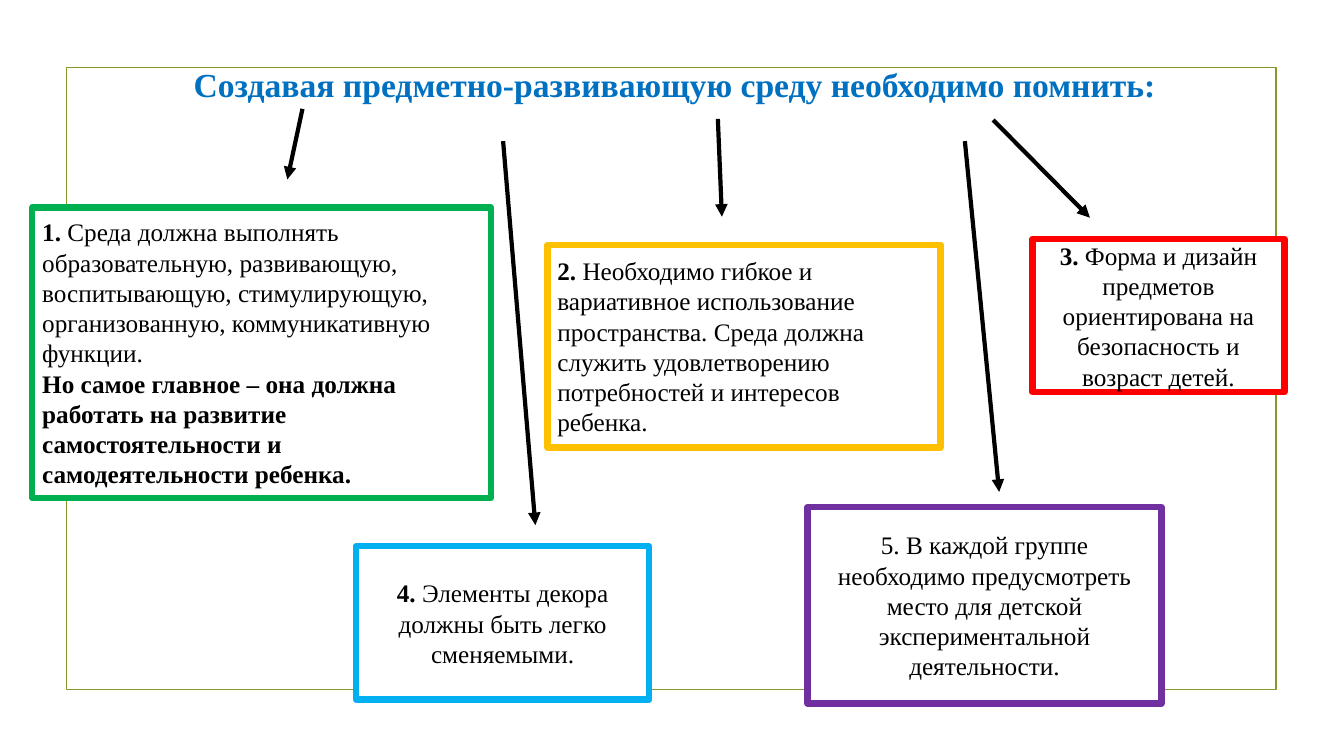
import pptx
import pptx.util
from pptx.dml.color import RGBColor
from pptx.enum.shapes import MSO_CONNECTOR, MSO_SHAPE
from pptx.enum.text import MSO_ANCHOR, MSO_AUTO_SIZE, PP_ALIGN
from pptx.oxml.ns import qn
from lxml import etree

PX = 9144
FONT = "Times New Roman"
COLORS = {
    "heading": "0070C0", "text": "000000", "paper": "FFFFFF", "frame": "83992A",
    "green": "00B050", "sky": "00B0F0", "red": "FF0000",
    "amber": "FFC000", "violet": "7030A0",
}
HEADING = "Создавая предметно-развивающую среду необходимо помнить:"
HEADING_AREA = (182, 58, 985, 50)
FRAME_AREA = (66, 67, 1200, 617)
LEFT, CENTER = PP_ALIGN.LEFT, PP_ALIGN.CENTER

PRINCIPLES = [
    ("green", (32, 206, 455, 288), LEFT, [
        [("1. ", True), ("Среда должна выполнять", False)],
        [("образовательную, развивающую, воспитывающую, стимулирующую, "
          "организованную, коммуникативную функции.", False)],
        [("Но самое главное – она должна работать на развитие "
          "самостоятельности и самодеятельности ребенка.", True)],
    ]),
    ("sky", (353, 542, 291, 152), CENTER, [
        [("4. ", True), ("Элементы декора должны быть легко сменяемыми.", False)],
    ]),
    ("red", (1024, 237, 250, 152), CENTER, [
        [("3. ", True), ("Форма и дизайн предметов ориентирована на "
                         "безопасность и возраст детей.", False)],
    ]),
    ("amber", (543, 243, 390, 201), LEFT, [
        [("2.", True), (" Необходимо гибкое и вариативное использование пространства. "
                        "Среда должна служить удовлетворению потребностей и "
                        "интересов ребенка.", False)],
    ]),
    ("violet", (801, 503, 351, 195), CENTER, [
        [("5. В каждой группе необходимо предусмотреть место для детской "
          "экспериментальной деятельности.", False)],
    ]),
]
ARROWS = [
    (300, 108, 285, 178),
    (712, 118, 716, 215),
    (985, 119, 1081, 216),
    (499, 140, 531, 521),
    (957, 140, 991, 488),
]


def emu(lengths):
    return [length * PX for length in lengths]


def rgb(name):
    return RGBColor.from_string(COLORS[name])


def assign(target, values):
    for name, value in values.items():
        setattr(target, name, value)


def add_run(paragraph, text, size, color, bold):
    run = paragraph.add_run()
    run.text = text
    assign(run.font, {"name": FONT, "size": pptx.util.Pt(size), "bold": bold})
    run.font.color.rgb = rgb(color)


def set_line(line, color, width):
    line.color.rgb = rgb(color)
    line.width = pptx.util.Pt(width)


def add_box(slide, area, color, width):
    box = slide.shapes.add_shape(MSO_SHAPE.RECTANGLE, *emu(area))
    box.shadow.inherit = False
    set_line(box.line, color, width)
    return box


def add_heading(slide):
    heading = slide.shapes.title
    assign(heading, dict(zip(("left", "top", "width", "height"), emu(HEADING_AREA))))
    assign(heading.text_frame, {
        "word_wrap": True, "vertical_anchor": MSO_ANCHOR.TOP,
        "auto_size": MSO_AUTO_SIZE.SHAPE_TO_FIT_TEXT,
    })
    paragraph = heading.text_frame.paragraphs[0]
    paragraph.alignment = LEFT
    add_run(paragraph, HEADING, 24, "heading", True)


def add_principle(slide, color, area, alignment, paragraphs):
    box = add_box(slide, area, color, 4.5)
    box.fill.solid()
    box.fill.fore_color.rgb = rgb("paper")
    frame = box.text_frame
    assign(frame, {"word_wrap": True, "vertical_anchor": MSO_ANCHOR.MIDDLE})
    for index, runs in enumerate(paragraphs):
        paragraph = frame.add_paragraph() if index else frame.paragraphs[0]
        paragraph.alignment = alignment
        for text, bold in runs:
            add_run(paragraph, text, 18, "text", bold)


def add_arrow(slide, ends):
    arrow = slide.shapes.add_connector(MSO_CONNECTOR.STRAIGHT, *emu(ends))
    set_line(arrow.line, "text", 3)
    properties = arrow.line._get_or_add_ln()
    etree.SubElement(properties, qn("a:tailEnd"), type="triangle")
    etree.SubElement(arrow._element.spPr, qn("a:effectLst"))


def main():
    deck = pptx.Presentation()
    assign(deck, {"slide_width": 1333 * PX, "slide_height": 750 * PX})
    slide = deck.slides.add_slide(deck.slide_layouts[5])
    add_heading(slide)
    add_box(slide, FRAME_AREA, "frame", 1.25).fill.background()
    for principle in PRINCIPLES:
        add_principle(slide, *principle)
    for ends in ARROWS:
        add_arrow(slide, ends)
    deck.save("out.pptx")


if __name__ == "__main__":
    main()
